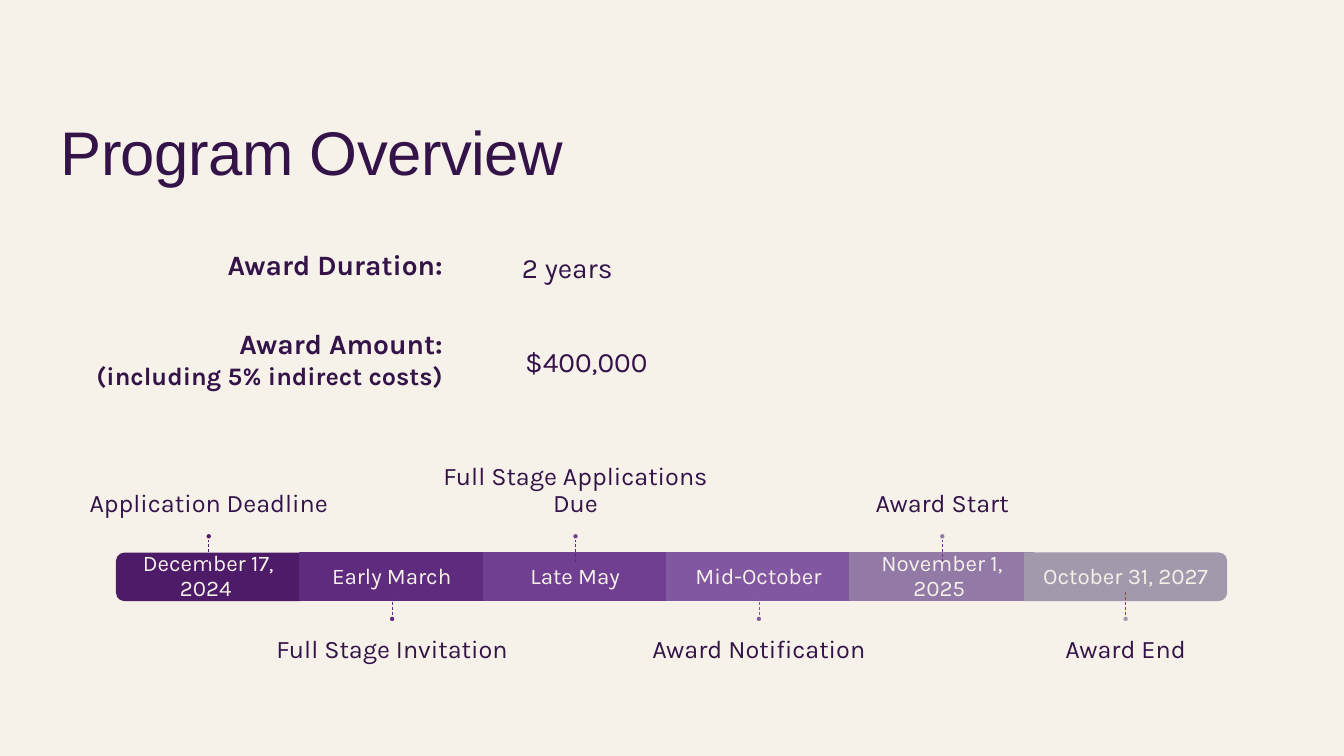
from lxml import etree
from pptx import Presentation
from pptx import util as u
from pptx.dml.color import RGBColor
from pptx.enum import dml, shapes, text
from pptx.oxml.ns import qn

CREAM = RGBColor(0xF6, 0xF2, 0xEA)
INK = RGBColor(0x34, 0x13, 0x48)

# Timeline geometry in centimetres
TIMELINE_LEFT, STEP, LAST_LEFT, LAST_WIDTH = 2.94, 4.62, 25.82, 5.08
BAR_TOP, BAR_HEIGHT = 13.94, 1.19
FIRST_CENTER, DOT = 5.26, 0.15
CALLOUT_WIDTH, CALLOUT_HEIGHT = 7.7, 2.59

# Date, event, bar colour, stem colour
MILESTONES = [
    ("December 17, 2024 ", "Application Deadline",
     RGBColor(0x4D, 0x1B, 0x68), RGBColor(0x51, 0x1D, 0x6E)),
    ("Early March", "Full Stage Invitation",
     RGBColor(0x5F, 0x2B, 0x7F), RGBColor(0x62, 0x2D, 0x83)),
    ("Late May", "Full Stage Applications Due",
     RGBColor(0x70, 0x3F, 0x92), RGBColor(0x65, 0x24, 0x85)),
    ("Mid-October", "Award Notification",
     RGBColor(0x81, 0x57, 0xA1), RGBColor(0x82, 0x57, 0xA3)),
    ("November 1, 2025 ", "Award Start",
     RGBColor(0x92, 0x79, 0xA6), RGBColor(0x7A, 0x2C, 0x9B)),
    ("October 31, 2027", "Award End",
     RGBColor(0xA3, 0x99, 0xAD), RGBColor(0x8E, 0x35, 0xB1)),
]

# Left, top, width, height, alignment, lines of (text, size, bold)
FACTS = [
    (3.05, 6.12, 8.36, 1.12, text.PP_ALIGN.RIGHT, [("Award Duration:", 20, True)]),
    (0.79, 8.1, 10.62, 1.88, text.PP_ALIGN.RIGHT,
     [("Award Amount:", 20, True), ("(including 5% indirect costs)", 18, True)]),
    (12.9, 6.2, 6.88, 1.12, text.PP_ALIGN.LEFT, [("2 years", 20, False)]),
    (12.98, 8.56, 6.63, 1.12, text.PP_ALIGN.LEFT, [("$400,000", 20, False)]),
]


def apply_format(target, values):
    for name, value in values.items():
        setattr(target, name, value)


class SlideBuilder:
    """Holds the style and the current slide."""

    heading_font = "Arial"
    body_font = "Karla"

    def __init__(self, presentation):
        self.slide = presentation.slides.add_slide(presentation.slide_layouts[5])
        self.slide.background.fill.solid()
        self.slide.background.fill.fore_color.rgb = CREAM

    def title(self, words, left, top, width, height):
        shape = self.slide.shapes.title
        apply_format(shape, {"left": u.Cm(left), "top": u.Cm(top),
                             "width": u.Cm(width), "height": u.Cm(height)})
        shape.text_frame.vertical_anchor = text.MSO_ANCHOR.MIDDLE
        paragraph = shape.text_frame.paragraphs[0]
        paragraph.alignment = text.PP_ALIGN.LEFT
        run = paragraph.add_run()
        run.text = words
        apply_format(run.font, {"name": self.heading_font, "size": u.Pt(44)})
        run.font.color.rgb = INK
        run.font._element.set("spc", "-40")

    def text_box(self, left, top, width, height, lines, color=INK,
                 frame_format=None, **paragraph_format):
        box = self.slide.shapes.add_textbox(
            u.Cm(left), u.Cm(top), u.Cm(width), u.Cm(height))
        frame = box.text_frame
        apply_format(frame, {"word_wrap": True, **(frame_format or {})})
        for index, (words, size, bold) in enumerate(lines):
            paragraph = frame.add_paragraph() if index else frame.paragraphs[0]
            apply_format(paragraph, paragraph_format)
            run = paragraph.add_run()
            run.text = words
            apply_format(run.font, {"name": self.body_font, "size": u.Pt(size), "bold": bold})
            run.font.color.rgb = color

    def block(self, kind, left, top, width, height, fill, line):
        shape = self.slide.shapes.add_shape(
            kind, u.Cm(left), u.Cm(top), u.Cm(width), u.Cm(height))
        shape.shadow.inherit = False
        shape.fill.solid()
        shape.fill.fore_color.rgb = fill
        shape.line.color.rgb = line
        shape.line.width = u.Pt(1)
        return shape

    def rounded_end(self, left, top, width, height, color, rotation):
        # Drawn upright around the same centre, then turned on its side
        shape = self.block(
            shapes.MSO_SHAPE.ROUND_2_SAME_RECTANGLE, left + (width - height) / 2,
            top + (height - width) / 2, height, width, color, color)
        shape.rotation = rotation

    def stem(self, x, top, bottom, color):
        line = self.slide.shapes.add_connector(
            shapes.MSO_CONNECTOR.STRAIGHT, u.Cm(x), u.Cm(top), u.Cm(x), u.Cm(bottom))
        line.line.color.rgb = color
        apply_format(line.line, {"width": u.Pt(0.5),
                                 "dash_style": dml.MSO_LINE.DASH})
        etree.SubElement(line._element.spPr, qn("a:effectLst"))

    def bar(self, index, date, color):
        last = index == len(MILESTONES) - 1
        left = LAST_LEFT if last else TIMELINE_LEFT + index * STEP
        area = (left, BAR_TOP, LAST_WIDTH if last else STEP, BAR_HEIGHT)
        if index == 0 or last:
            self.rounded_end(*area, color, 90 if last else 270)
        else:
            self.block(shapes.MSO_SHAPE.RECTANGLE, *area, color, color)
        margins = dict.fromkeys(
            ("margin_left", "margin_top", "margin_right", "margin_bottom"), u.Cm(0.33))
        self.text_box(*area, [(date, 16, False)], CREAM,
                      {**margins, "vertical_anchor": text.MSO_ANCHOR.MIDDLE},
                      alignment=text.PP_ALIGN.CENTER, line_spacing=0.9)

    def callout(self, index, event, color, stem_color):
        center = FIRST_CENTER + index * STEP
        above = index % 2 == 0
        if above:
            box_top, stem_top, stem_bottom, dot_top = 10.85, 13.59, 14.17, 13.44
            anchor = text.MSO_ANCHOR.BOTTOM
        else:
            box_top, stem_top, stem_bottom, dot_top = 15.67, 14.91, 15.52, 15.52
            anchor = text.MSO_ANCHOR.TOP
        self.text_box(center - CALLOUT_WIDTH / 2, box_top, CALLOUT_WIDTH, CALLOUT_HEIGHT,
                      [(event, 18, False)], INK,
                      {"margin_left": 0, "margin_right": 0,
                       "margin_top": u.Cm(0 if above else 0.38),
                       "margin_bottom": u.Cm(0.38 if above else 0),
                       "vertical_anchor": anchor},
                      alignment=text.PP_ALIGN.CENTER, line_spacing=0.9)
        self.stem(center, stem_top, stem_bottom, stem_color)
        self.block(shapes.MSO_SHAPE.OVAL, center - DOT / 2, dot_top, DOT, DOT, color, CREAM)


def main():
    presentation = Presentation()
    apply_format(presentation, {"slide_width": u.Cm(33.86), "slide_height": u.Cm(19.05)})
    builder = SlideBuilder(presentation)

    # Heading and award facts
    builder.title("Program Overview", 1.27, 2.62, 31.24, 2.36)
    for left, top, width, height, alignment, lines in FACTS:
        builder.text_box(left, top, width, height, lines, alignment=alignment)

    # Timeline
    for index, (date, event, color, stem_color) in enumerate(MILESTONES):
        builder.bar(index, date, color)
        builder.callout(index, event, color, stem_color)

    presentation.save("out.pptx")


if __name__ == "__main__":
    main()
